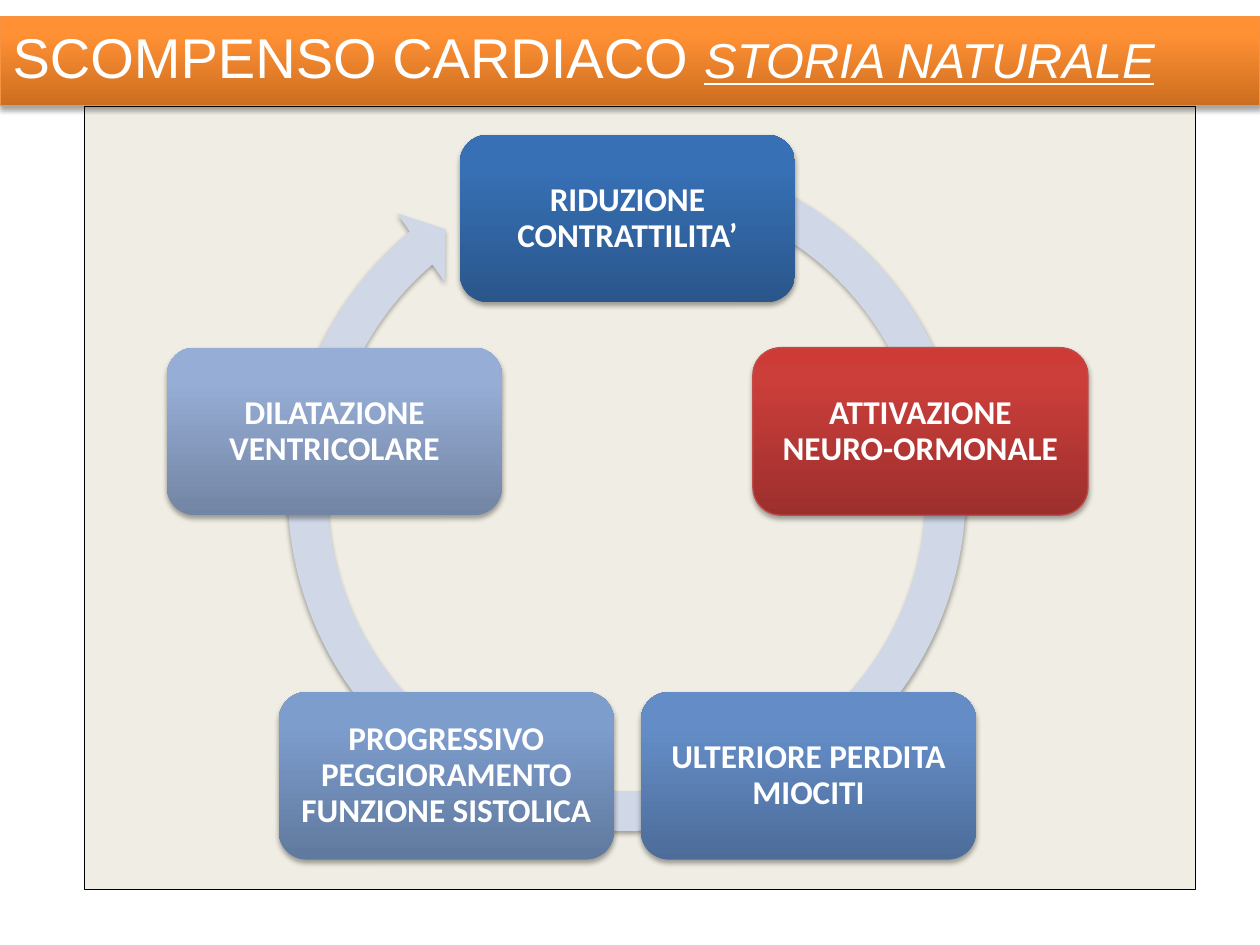
from copy import deepcopy
from dataclasses import dataclass
from math import cos, pi, sin
from typing import Optional

from lxml import etree
from pptx import Presentation
from pptx.dml.color import RGBColor
from pptx.enum.shapes import MSO_SHAPE
from pptx.enum.text import MSO_ANCHOR, PP_ALIGN
from pptx.oxml.ns import qn
from pptx.util import Inches, Pt

RECTANGLE = MSO_SHAPE.RECTANGLE
ROUNDED = MSO_SHAPE.ROUNDED_RECTANGLE
CIRCULAR_ARROW = MSO_SHAPE.CIRCULAR_ARROW
CENTER, LEFT = PP_ALIGN.CENTER, PP_ALIGN.LEFT
MIDDLE, TOP = MSO_ANCHOR.MIDDLE, MSO_ANCHOR.TOP

CENTER_X, CENTER_Y, RADIUS = 4.98, 4.18, 2.445
STAGE_WIDTH, STAGE_HEIGHT = 2.66, 1.33
RING_SIZE = 5.73
GRADIENT_POSITIONS = (0, 0.8, 1)
WHITE = "FFFFFF"


@dataclass
class Stage:
    text: str
    gradient: tuple[str, str, str]
    outline: Optional[str] = None


STAGES = [
    Stage("RIDUZIONE CONTRATTILITA’", ("2A568B", "3770B5", "3570B8")),
    Stage("ATTIVAZIONE NEURO-ORMONALE", ("9C2F2D", "CB3E3A", "CE3B37"), "BF4C48"),
    Stage("ULTERIORE PERDITA MIOCITI", ("4D6C99", "648DC7", "638DCA")),
    Stage("PROGRESSIVO PEGGIORAMENTO FUNZIONE SISTOLICA", ("60799E", "7D9DCD", "7C9DD0")),
    Stage("DILATAZIONE VENTRICOLARE", ("7385A4", "96ADD5", "95ADD7")),
]


def rgb(value: str) -> RGBColor:
    return RGBColor.from_string(value)


def set_solid(shape, color: str) -> None:
    shape.fill.solid()
    shape.fill.fore_color.rgb = rgb(color)


def set_gradient(shape, colors: tuple[str, str, str]) -> None:
    fill = shape.fill
    fill.gradient()
    fill.gradient_angle = 90
    stop_list = shape._element.spPr.find(qn("a:gradFill")).find(qn("a:gsLst"))
    stop_list.insert(1, deepcopy(stop_list[0]))
    for stop, position, color in zip(fill.gradient_stops, GRADIENT_POSITIONS, colors):
        stop.position = position
        stop.color.rgb = rgb(color)


def set_outline(shape, color: Optional[str]) -> None:
    if color is None:
        shape.line.fill.background()
    else:
        shape.line.color.rgb = rgb(color)
        shape.line.width = Pt(0.75)


def add_shadow(shape) -> None:
    shape.shadow.inherit = False
    effects = shape._element.spPr.find(qn("a:effectLst"))
    shadow = etree.SubElement(
        effects, qn("a:outerShdw"), blurRad=str(Pt(3.1)), dist=str(Pt(1.8)),
        dir="5400000", rotWithShape="0",
    )
    color = etree.SubElement(shadow, qn("a:srgbClr"), val="000000")
    etree.SubElement(color, qn("a:alpha"), val="35000")


def format_run(run, font: str, size: float) -> None:
    run.font.name = font
    run.font.size = Pt(size)
    run.font.color.rgb = rgb(WHITE)


def add_board(slide) -> None:
    board = slide.shapes.add_shape(
        RECTANGLE, Inches(0.67), Inches(0.84), Inches(8.82), Inches(6.22)
    )
    set_solid(board, "F0EEE4")
    set_outline(board, "000000")
    board.shadow.inherit = False


def add_ring(slide) -> None:
    ring = slide.shapes.add_shape(
        CIRCULAR_ARROW, Inches(2.11), Inches(1.04), Inches(RING_SIZE), Inches(RING_SIZE)
    )
    for index, value in enumerate((0.055, 3.307, 137.93, 173.756, 0.058)):
        ring.adjustments[index] = value
    set_solid(ring, "D0D8E8")
    set_outline(ring, None)
    add_shadow(ring)


def add_stage(slide, stage: Stage, angle: float) -> None:
    left = CENTER_X + RADIUS * sin(angle) - STAGE_WIDTH / 2
    top = CENTER_Y - RADIUS * cos(angle) - STAGE_HEIGHT / 2
    box = slide.shapes.add_shape(
        ROUNDED, Inches(left), Inches(top), Inches(STAGE_WIDTH), Inches(STAGE_HEIGHT)
    )
    set_gradient(box, stage.gradient)
    set_outline(box, stage.outline)
    add_shadow(box)
    frame = box.text_frame
    frame.text = stage.text
    frame.word_wrap = True
    frame.vertical_anchor = MIDDLE
    frame.margin_left = frame.margin_right = Inches(0.08)
    frame.margin_top = frame.margin_bottom = Inches(0.08)
    paragraph = frame.paragraphs[0]
    paragraph.alignment = CENTER
    paragraph.line_spacing = 0.9
    format_run(paragraph.runs[0], "Calibri", 19)
    paragraph.runs[0].font.bold = True


def format_title(slide) -> None:
    title = slide.shapes.title
    title.left, title.top = Inches(0), Inches(0.13)
    title.width, title.height = Inches(10), Inches(0.71)
    set_gradient(title, ("CC6E20", "FF9034", "FF9136"))
    set_outline(title, "F69240")
    add_shadow(title)
    frame = title.text_frame
    frame.text = "SCOMPENSO CARDIACO "
    frame.word_wrap = True
    frame.vertical_anchor = TOP
    paragraph = frame.paragraphs[0]
    paragraph.alignment = LEFT
    subject = paragraph.runs[0]
    topic = paragraph.add_run()
    topic.text = "STORIA NATURALE"
    format_run(subject, "Arial", 32)
    format_run(topic, "Arial", 28)
    topic.font.italic = True
    topic.font.underline = True
    slide.shapes._spTree.append(title._element)


def main() -> None:
    deck = Presentation()
    deck.slide_width, deck.slide_height = Inches(10), Inches(7.5)
    slide = deck.slides.add_slide(deck.slide_layouts[5])
    add_board(slide)
    add_ring(slide)
    for index, stage in enumerate(STAGES):
        add_stage(slide, stage, 2 * pi * index / len(STAGES))
    format_title(slide)
    deck.save("out.pptx")


if __name__ == "__main__":
    main()
